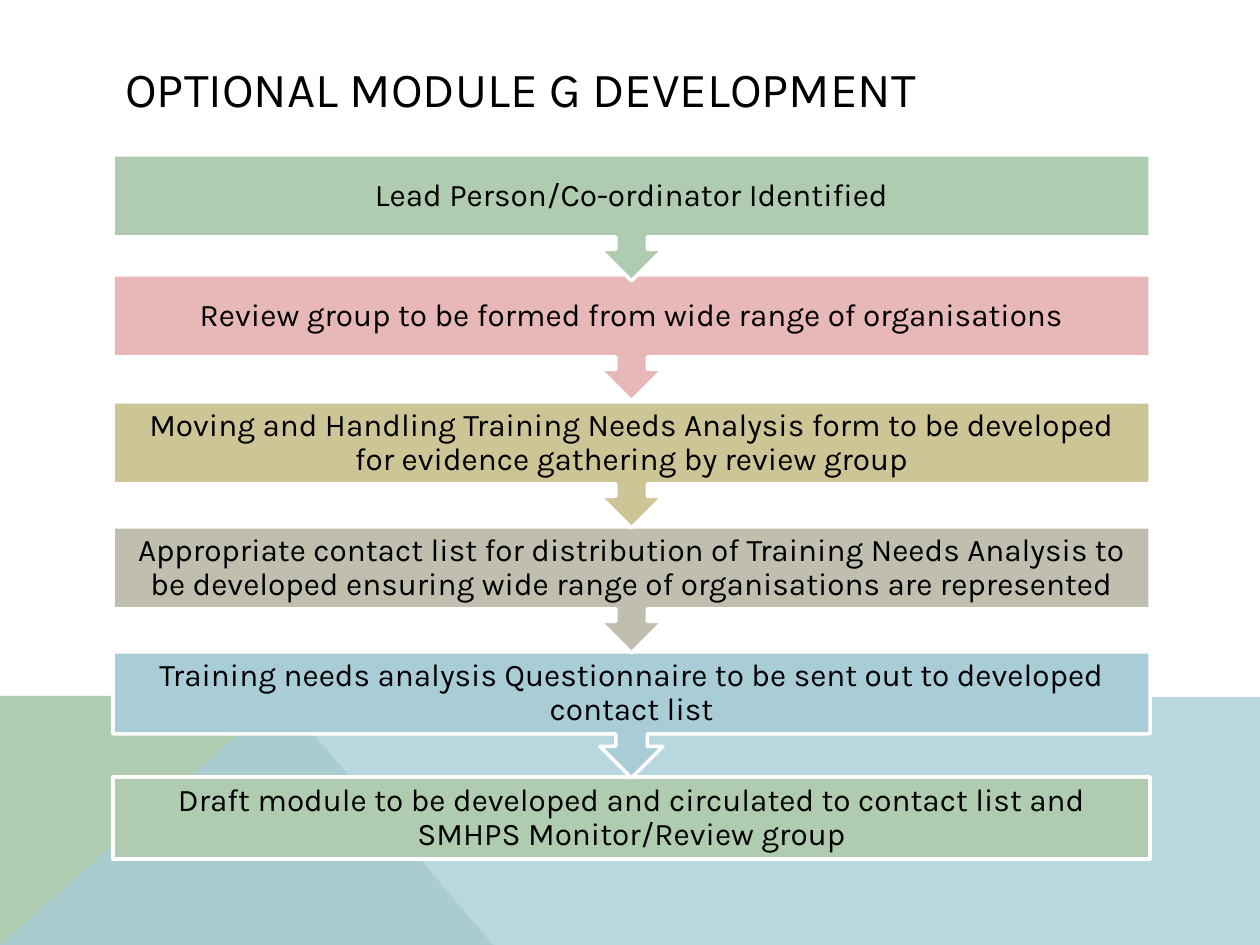
"""Build the Optional Module G development flow slide."""
from dataclasses import dataclass

from lxml.etree import SubElement
from pptx import Presentation
from pptx.dml.color import RGBColor
from pptx.enum.shapes import MSO_SHAPE
from pptx.enum.text import MSO_ANCHOR, PP_ALIGN
from pptx.oxml.ns import qn
from pptx.slide import Slide
from pptx.util import Emu, Pt

EMU_PER_PX = 914400 / 126
WIDTH, HEIGHT = 1260, 945
COLOURS = {
    "black": "000000", "white": "FFFFFF", "green": "B0CCB0", "blue": "A8CDD7",
    "stone": "C0BEAF", "olive": "CEC597", "pink": "E8B7B7",
}
HILLS = [
    ("green", None, [(0, 945), (0, 696), (281, 696), (493, 945)]),
    ("blue", 80, [(0, 945), (281, 696), (1260, 697), (1260, 945)]),
]
STEPS = [
    (155, "green", "Lead Person/Co-ordinator Identified"),
    (275, "pink", "Review group to be formed from wide range of organisations"),
    (402, "olive", "Moving and Handling Training Needs Analysis form to be developed "
                   "for evidence gathering by review group"),
    (527, "stone", "Appropriate contact list for distribution of Training Needs Analysis "
                   "to be developed ensuring wide range of organisations are represented"),
    (652, "blue", "Training needs analysis Questionnaire to be sent out to developed "
                  "contact list"),
    (777, "green", "Draft module to be developed and circulated to contact list and "
                   "SMHPS Monitor/Review group"),
]
STEP_LEFT, STEP_WIDTH, STEP_HEIGHT, CALLOUT_HEIGHT = 113, 1037, 82, 126


def px(length):
    return Emu(round(length * EMU_PER_PX))


def colour(name):
    return RGBColor.from_string(COLOURS[name])


def write_text(frame, text, *, font, size, align=PP_ALIGN.LEFT, spacing=1.0, inset=None):
    frame.word_wrap = True
    frame.vertical_anchor = MSO_ANCHOR.MIDDLE
    if inset is not None:
        frame.margin_left = frame.margin_right = px(inset)
        frame.margin_top = frame.margin_bottom = px(inset)
    paragraph = frame.paragraphs[0]
    paragraph.alignment = align
    paragraph.line_spacing = spacing
    run = paragraph.add_run()
    run.text = text
    run.font.name = font
    run.font.size = Pt(size)
    run.font.color.rgb = colour("black")


@dataclass
class FlowSlide:
    slide: Slide
    font: str = "Karla"
    title_size: int = 28
    step_size: int = 18
    outline: int = 2

    def title(self, text, left, top, width, height):
        box = self.slide.shapes.add_textbox(px(left), px(top), px(width), px(height))
        write_text(box.text_frame, text, font=self.font, size=self.title_size)

    def hill(self, fill, opacity, points):
        builder = self.slide.shapes.build_freeform(*points[0], scale=EMU_PER_PX)
        builder.add_line_segments(points[1:], close=True)
        hill = builder.convert_to_shape()
        hill.shadow.inherit = False
        hill.fill.solid()
        hill.fill.fore_color.rgb = colour(fill)
        hill.line.fill.background()
        if opacity is not None:
            rgb = hill.fill._xPr.find(qn("a:solidFill")).find(qn("a:srgbClr"))
            SubElement(rgb, qn("a:alpha"), val=str(opacity * 1000))

    def step(self, top, fill, text, is_last):
        preset = MSO_SHAPE.RECTANGLE if is_last else MSO_SHAPE.DOWN_ARROW_CALLOUT
        height = STEP_HEIGHT if is_last else CALLOUT_HEIGHT
        step = self.slide.shapes.add_shape(
            preset, px(STEP_LEFT), px(top), px(STEP_WIDTH), px(height))
        if not is_last:
            step.adjustments[3] = STEP_HEIGHT / CALLOUT_HEIGHT
        step.shadow.inherit = False
        step.fill.solid()
        step.fill.fore_color.rgb = colour(fill)
        step.line.color.rgb = colour("white")
        step.line.width = Pt(self.outline)
        write_text(step.text_frame, text, font=self.font, size=self.step_size,
                   align=PP_ALIGN.CENTER, spacing=0.9, inset=18)


def main():
    deck = Presentation()
    deck.slide_width, deck.slide_height = px(WIDTH), px(HEIGHT)
    flow = FlowSlide(deck.slides.add_slide(deck.slide_layouts[6]))
    for fill, opacity, points in HILLS:
        flow.hill(fill, opacity, points)
    flow.title("OPTIONAL MODULE G DEVELOPMENT", 113, 50, 1036, 76)
    for step in reversed(STEPS):
        flow.step(*step, is_last=step is STEPS[-1])
    deck.save("out.pptx")


if __name__ == "__main__":
    main()
